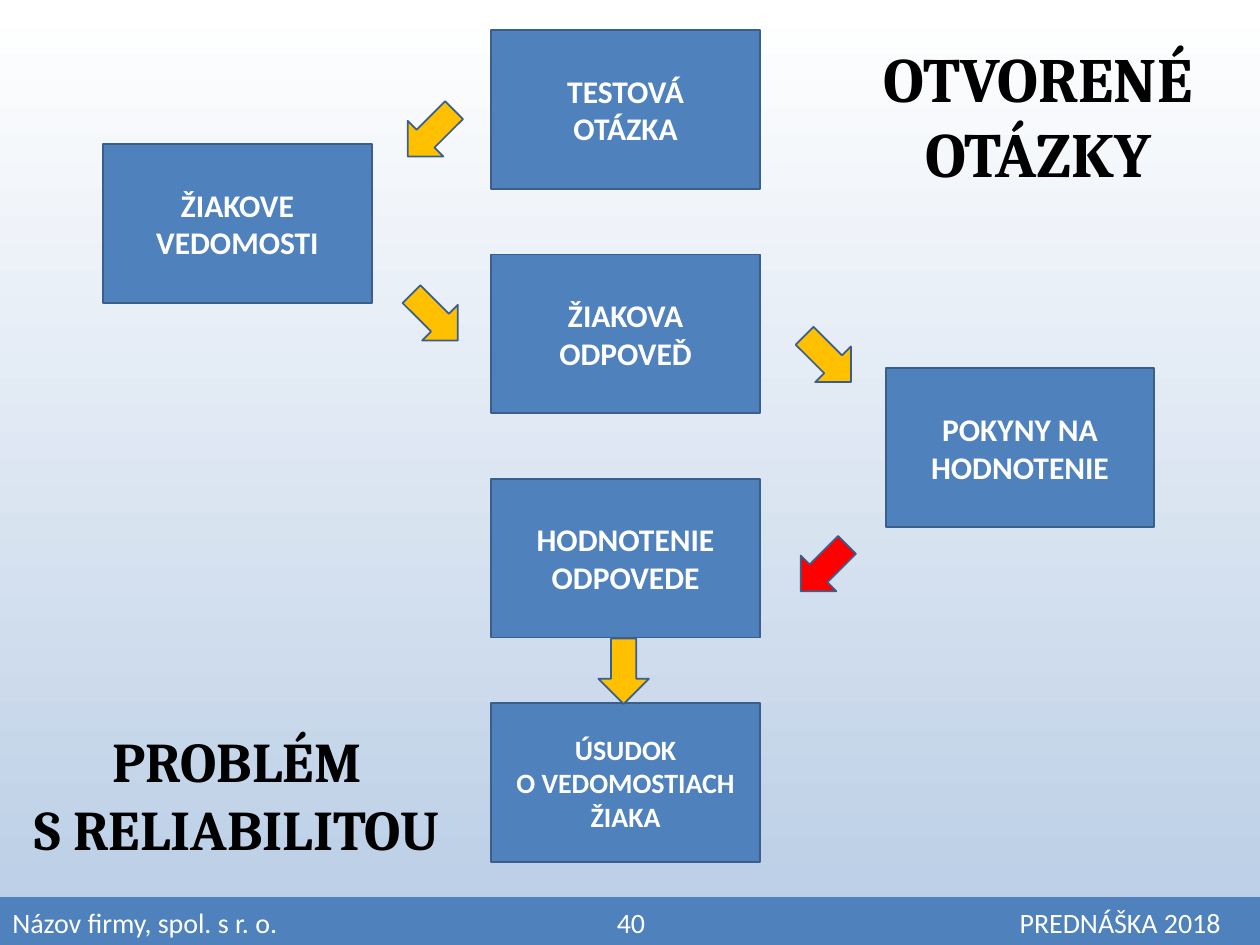
from copy import deepcopy

from lxml import etree
from pptx import Presentation
from pptx.dml.color import RGBColor
from pptx.enum.shapes import MSO_SHAPE
from pptx.enum.text import MSO_ANCHOR, MSO_AUTO_SIZE, PP_ALIGN
from pptx.oxml.ns import qn
from pptx.util import Pt

WHITE = RGBColor(0xFF, 0xFF, 0xFF)
BLACK = RGBColor(0x00, 0x00, 0x00)
PALE_BLUE = RGBColor(0xB9, 0xCD, 0xE5)
BLUE = RGBColor(0x4F, 0x81, 0xBD)
DARK_BLUE = RGBColor(0x3A, 0x5F, 0x8C)
AMBER = RGBColor(0xFF, 0xC0, 0x00)
RED = RGBColor(0xFF, 0x00, 0x00)

RECTANGLE = MSO_SHAPE.RECTANGLE
PROCESS = MSO_SHAPE.FLOWCHART_PROCESS
DOWN_ARROW = MSO_SHAPE.DOWN_ARROW
TOP, MIDDLE, BOTTOM = MSO_ANCHOR.TOP, MSO_ANCHOR.MIDDLE, MSO_ANCHOR.BOTTOM
LEFT, CENTER = PP_ALIGN.LEFT, PP_ALIGN.CENTER
NO_AUTOFIT = MSO_AUTO_SIZE.NONE

STEP_WIDTH, STEP_HEIGHT = 153.4, 90.7
HALF_ROW = 64.1
SIDE_DROP = 1
COLUMNS = [0, 221.8, 447.2]
STEPS = [
    ("TESTOVÁ\nOTÁZKA", 1, 0, 18),
    ("ŽIAKOVA\nODPOVEĎ", 1, 2, 18),
    ("HODNOTENIE\nODPOVEDE", 1, 4, 18),
    ("ÚSUDOK\nO VEDOMOSTIACH\nŽIAKA", 1, 6, 16),
    ("ŽIAKOVE\nVEDOMOSTI", 0, 1, 18),
    ("POKYNY NA\nHODNOTENIE", 2, 3, 18),
]
ARROW_WIDTH, ARROW_HEIGHT = 28.8, 37.4
ARROWS = [
    (283, 347.7, 0, AMBER),
    (172.8, 40.3, 45, AMBER),
    (175, 145.4, 315, AMBER),
    (397.4, 288.7, 45, RED),
    (399.6, 169.2, 315, AMBER),
]


def write(frame, text, size, font="Calibri", color=WHITE, bold=False,
          align=CENTER, anchor=MIDDLE, space_after=0):
    """Fill a text frame with one formatted paragraph and return it."""
    frame.word_wrap = True
    frame.auto_size = NO_AUTOFIT
    frame.vertical_anchor = anchor
    paragraph = frame.paragraphs[0]
    paragraph.text = text
    paragraph.alignment = align
    paragraph.space_after = Pt(space_after)
    for run in paragraph.runs:
        run.font.size = Pt(size)
        run.font.name = font
        run.font.bold = bold
        run.font.color.rgb = color
    for line_break in paragraph._p.findall(qn("a:br")):
        line_break.append(deepcopy(paragraph.runs[0]._r.rPr))
    return paragraph


def add_block(slide, preset, left, top, width, height, fill, outline=None):
    """Add a filled preset shape without shadow."""
    block = slide.shapes.add_shape(preset, Pt(left), Pt(top), Pt(width), Pt(height))
    block.shadow.inherit = False
    block.fill.solid()
    block.fill.fore_color.rgb = fill
    if outline is None:
        block.line.fill.background()
    else:
        block.line.color.rgb = outline
        block.line.width = Pt(1)
    return block


def paint_background(slide):
    """Shade the slide from white at the top to pale blue."""
    fill = slide.background.fill
    fill.gradient()
    fill.gradient_angle = 270
    for stop, color, position in zip(fill.gradient_stops, (WHITE, PALE_BLUE), (0, 1)):
        stop.color.rgb = color
        stop.position = position


def add_footer(slide, left, top, width, height):
    """Add the footer bar with its three tabbed entries."""
    bar = add_block(slide, RECTANGLE, left, top, width, height, BLUE)
    entries = write(bar.text_frame, "Názov firmy, spol. s r. o.\t40\tPREDNÁŠKA 2018",
                    16, align=LEFT, anchor=BOTTOM)
    tabs = etree.SubElement(entries._p.get_or_add_pPr(), qn("a:tabLst"))
    for position, kind in ((width / 2 - 6.5, "ctr"), (width - 29.5, "r")):
        etree.SubElement(tabs, qn("a:tab"), pos=str(int(Pt(position))), algn=kind)


def add_flow(slide, left, top):
    """Add the assessment steps and the arrows between them."""
    for label, column, row, size in STEPS:
        step = add_block(slide, PROCESS, left + COLUMNS[column],
                         top + row * HALF_ROW + row % 2 * SIDE_DROP,
                         STEP_WIDTH, STEP_HEIGHT, BLUE, DARK_BLUE)
        write(step.text_frame, label, size, bold=True)
    for x, y, rotation, color in ARROWS:
        arrow = add_block(slide, DOWN_ARROW, left + x, top + y,
                          ARROW_WIDTH, ARROW_HEIGHT, color, DARK_BLUE)
        arrow.rotation = rotation


def add_heading(heading, text, size, left, top, width, height):
    """Place a heading in its box and write it in bold Cambria."""
    heading.left, heading.top = Pt(left), Pt(top)
    heading.width, heading.height = Pt(width), Pt(height)
    write(heading.text_frame, text, size, font="Cambria", color=BLACK,
          bold=True, anchor=TOP, space_after=12)


def main():
    """Build and save the slide."""
    deck = Presentation()
    deck.slide_width, deck.slide_height = Pt(720), Pt(540)
    slide = deck.slides.add_slide(deck.slide_layouts[5])
    paint_background(slide)
    add_footer(slide, 0, 512.6, 720, 27.4)
    add_flow(slide, 59, 17.2)
    add_heading(slide.shapes.title, "OTVORENÉ\nOTÁZKY", 36, 468.7, 18.7, 249, 122.4)
    problem = slide.shapes.add_textbox(0, 0, 0, 0)
    add_heading(problem, "PROBLÉM\nS RELIABILITOU", 32, 9.4, 411.8, 252, 92.9)
    deck.save("out.pptx")


if __name__ == "__main__":
    main()
